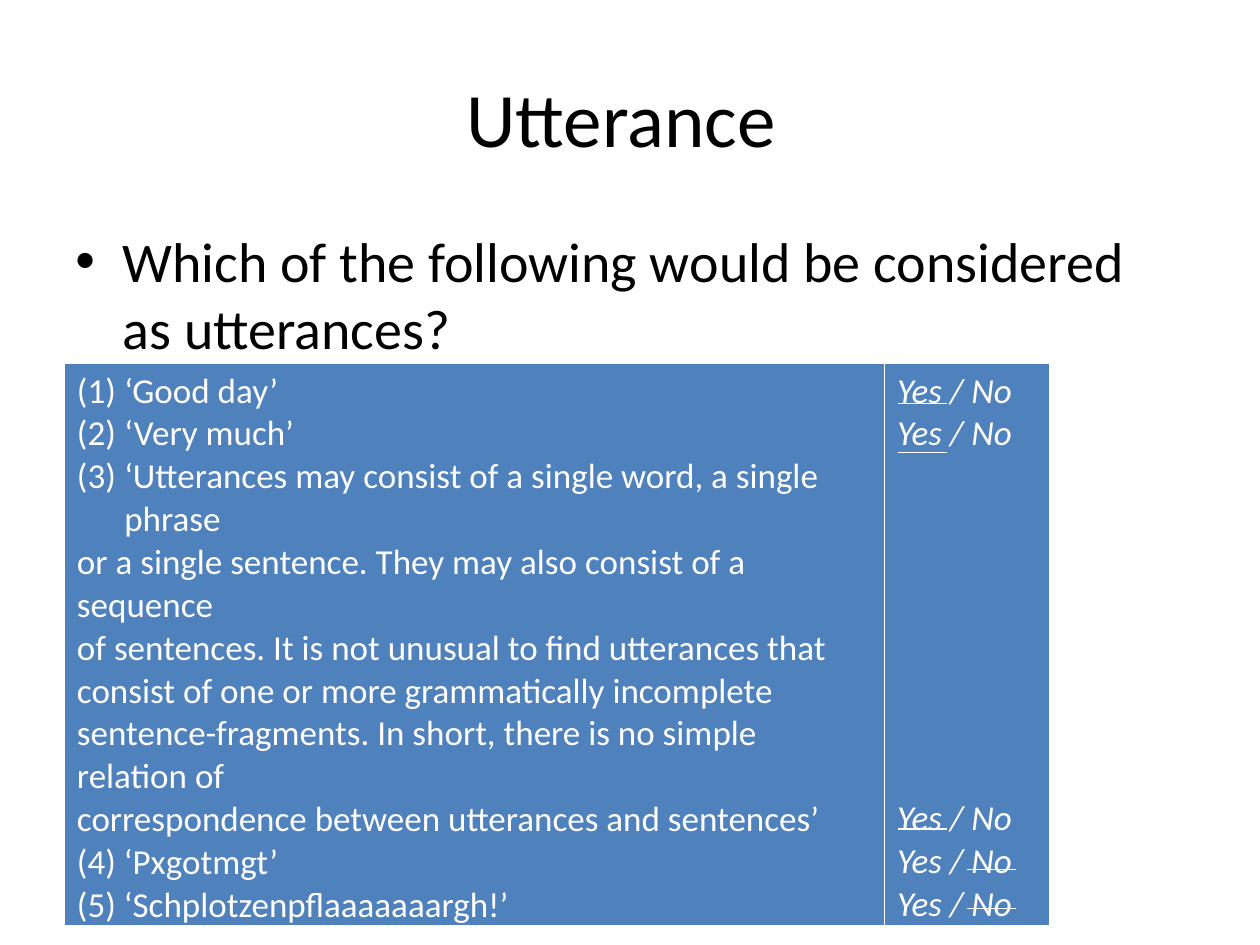
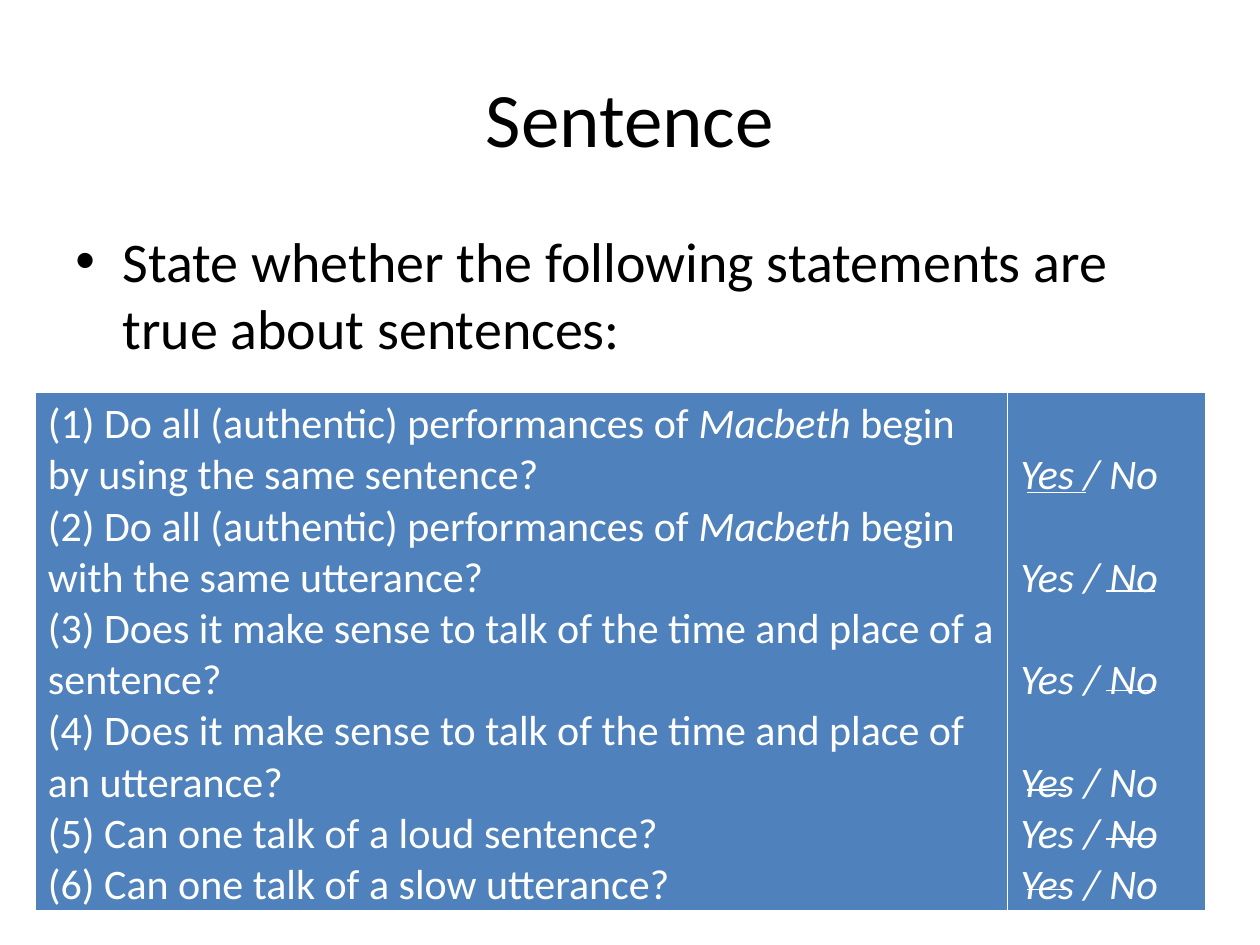
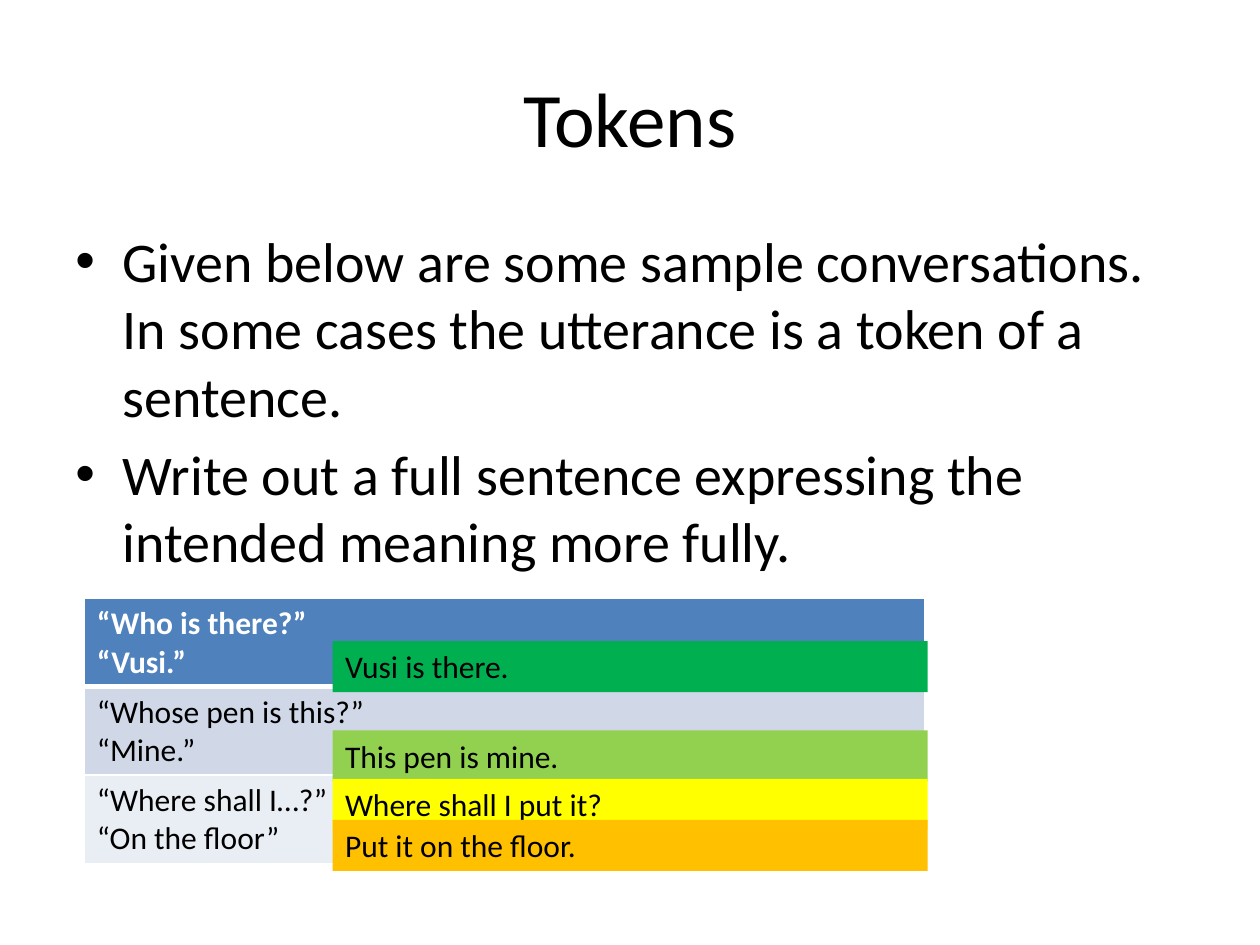
"""Build three exercise slides on utterances, sentences and tokens."""
from dataclasses import dataclass

from pptx import Presentation
from pptx.dml.color import RGBColor
from pptx.enum import shapes, text
from pptx.oxml.ns import qn
from pptx.util import Pt
from lxml import etree

FONT = "Calibri"
BLACK = RGBColor(0x00, 0x00, 0x00)
WHITE = RGBColor(0xFF, 0xFF, 0xFF)
BLUE = RGBColor(0x4F, 0x81, 0xBD)
PALE_BLUE = RGBColor(0xD0, 0xD8, 0xE8)
PALER_BLUE = RGBColor(0xE9, 0xED, 0xF4)
GREEN = RGBColor(0x00, 0xB0, 0x50)
LIME = RGBColor(0x92, 0xD0, 0x50)
YELLOW = RGBColor(0xFF, 0xFF, 0x00)
AMBER = RGBColor(0xFF, 0xC0, 0x00)

CHOICE = "*Yes / No*"
INDENT = 27
LINE_HEIGHT = 1.22
CELL_MARGIN = 3.6


@dataclass(frozen=True)
class Para:
    """A paragraph; text between asterisks is italic."""
    text: str
    before: float = 0
    bullet: str = ""
    numbered: bool = False


@dataclass(frozen=True)
class Cell:
    """A filled table cell."""
    paras: list[Para]
    fill: RGBColor = BLUE
    color: RGBColor = WHITE
    bold: bool = False
    top: float = CELL_MARGIN
    bottom_line: float = 3


@dataclass(frozen=True)
class Mark:
    """A line under a chosen answer."""
    x: float
    y: float
    width: float = 28


@dataclass(frozen=True)
class Answer:
    """A coloured strip holding a full sentence."""
    text: str
    top: float
    fill: RGBColor


def plain(*lines: str) -> list[Para]:
    """Turn lines into unformatted paragraphs."""
    return [Para(line) for line in lines]


def write(tf, paras: list[Para], *, size: float, color: RGBColor = BLACK,
          bold: bool = False, align=text.PP_ALIGN.LEFT) -> None:
    """Write formatted paragraphs into a text frame."""
    tf.word_wrap = True
    for i, para in enumerate(paras):
        p = tf.paragraphs[0] if i == 0 else tf.add_paragraph()
        p.alignment = align
        p.space_before = Pt(para.before)
        if para.bullet or para.numbered:
            pr = p._p.get_or_add_pPr()
            pr.set("marL", str(Pt(INDENT)))
            pr.set("indent", str(Pt(-INDENT)))
            if para.numbered:
                etree.SubElement(pr, qn("a:buAutoNum"), type="arabicParenBoth")
            else:
                etree.SubElement(pr, qn("a:buFont"), typeface="Arial")
                etree.SubElement(pr, qn("a:buChar"), char=para.bullet)
        for j, piece in enumerate(para.text.split("*")):
            if piece:
                r = p.add_run()
                r.text = piece
                r.font.name, r.font.size = FONT, Pt(size)
                r.font.bold, r.font.italic = bold, j % 2 == 1
                r.font.color.rgb = color


def add_text(s, top: float, height: float, paras: list[Para], *, size: float,
             align=text.PP_ALIGN.LEFT, anchor=text.MSO_ANCHOR.TOP) -> None:
    """Add a text box spanning the content width."""
    tf = s.shapes.add_textbox(Pt(36), Pt(top), Pt(648), Pt(height)).text_frame
    tf.vertical_anchor = anchor
    write(tf, paras, size=size, align=align)


def add_page(prs, title: str, bullets: list[str]):
    """Add a slide with its title and bulleted prompt."""
    s = prs.slides.add_slide(prs.slide_layouts[6])
    add_text(s, 21.6, 90, plain(title), size=44, align=text.PP_ALIGN.CENTER,
             anchor=text.MSO_ANCHOR.MIDDLE)
    add_text(s, 126, 356.4, [Para(b, before=6.4, bullet="•") for b in bullets], size=32)
    return s


def set_borders(cell, bottom: float) -> None:
    """Draw white borders round a cell."""
    pr = cell._tc.get_or_add_tcPr()
    widths = {"a:lnL": 1, "a:lnR": 1, "a:lnT": 1, "a:lnB": bottom}
    for i, (tag, width) in enumerate(widths.items()):
        ln = etree.Element(qn(tag), w=str(Pt(width)))
        fill = etree.SubElement(ln, qn("a:solidFill"))
        etree.SubElement(fill, qn("a:srgbClr"), val=str(WHITE))
        pr.insert(i, ln)


def add_grid(s, left: float, top: float, widths: list[float], row_height: float,
             rows: list[list[Cell]], *, size: float) -> None:
    """Add a table of filled cells."""
    table = s.shapes.add_table(len(rows), len(widths), Pt(left), Pt(top),
                               Pt(sum(widths)), Pt(row_height * len(rows))).table
    table.horz_banding = False
    for column, width in zip(table.columns, widths):
        column.width = Pt(width)
    for i, row in enumerate(rows):
        for j, item in enumerate(row):
            cell = table.cell(i, j)
            cell.fill.solid()
            cell.fill.fore_color.rgb = item.fill
            cell.margin_top = Pt(item.top)
            set_borders(cell, item.bottom_line)
            write(cell.text_frame, item.paras, size=size, color=item.color, bold=item.bold)


def add_marks(s, marks: list[Mark]) -> None:
    """Draw the lines that mark the right answers."""
    for mark in marks:
        line = s.shapes.add_connector(shapes.MSO_CONNECTOR.STRAIGHT, Pt(mark.x), Pt(mark.y),
                                      Pt(mark.x + mark.width), Pt(mark.y))
        line.line.color.rgb = WHITE
        line.line.width = Pt(0.75)
        etree.SubElement(line._element.spPr, qn("a:effectLst"))


def add_answer(s, answer: Answer) -> None:
    """Add a strip with a full sentence."""
    sp = s.shapes.add_shape(shapes.MSO_SHAPE.RECTANGLE, Pt(190.1), Pt(answer.top),
                            Pt(340), Pt(29.1))
    sp.shadow.inherit = False
    sp.fill.solid()
    sp.fill.fore_color.rgb = answer.fill
    sp.line.fill.background()
    sp.text_frame.vertical_anchor = text.MSO_ANCHOR.TOP
    write(sp.text_frame, plain(answer.text), size=18)


def build_utterance(prs) -> None:
    """Build the slide on utterances."""
    s = add_page(prs, "Utterance ", ["Which of the following would be considered as utterances?"])
    numbered = ["‘Good day’", "‘Very much’",
                "‘Utterances may consist of a single word, a single phrase"]
    examples = [Para(line, numbered=True) for line in numbered] + plain(
        "or a single sentence. They may also consist of a sequence",
        "of sentences. It is not unusual to find utterances that",
        "consist of one or more grammatically incomplete",
        "sentence-fragments. In short, there is no simple relation of",
        "correspondence between utterances and sentences’",
        "(4) ‘Pxgotmgt’",
        "(5) ‘Schplotzenpflaaaaaaargh!’")
    size = 20
    skipped_lines = [0, 0, 8, 0, 0]
    choices = [Para(CHOICE, before=n * size * LINE_HEIGHT) for n in skipped_lines]
    add_grid(s, 36.8, 207.6, [468.6, 94.4], 319, [[Cell(examples), Cell(choices)]], size=size)
    yes, no = 513.2, 552.8
    add_marks(s, [Mark(yes, 230.4), Mark(yes, 258.5), Mark(yes, 473.8),
                  Mark(no, 496.8), Mark(no, 519.1)])


def build_sentence(prs) -> None:
    """Build the slide on sentences."""
    s = add_page(prs, "Sentence",
                 ["State whether the following statements are true about sentences:"])
    questions = plain(
        "(1) Do all (authentic) performances of *Macbeth *begin by using the same sentence?",
        "(2) Do all (authentic) performances of *Macbeth *begin with the same utterance?",
        "(3) Does it make sense to talk of the time and place of a sentence?",
        "(4) Does it make sense to talk of the time and place of an utterance?",
        "(5) Can one talk of a loud sentence?",
        "(6) Can one talk of a slow utterance?")
    size = 24
    line = size * LINE_HEIGHT
    choices = [Para(CHOICE, before=n * line) for n in [0, 1, 1, 1, 0, 0]]
    add_grid(s, 20.2, 224.2, [555.6, 113], 295.2,
             [[Cell(questions), Cell(choices, top=CELL_MARGIN + line)]], size=size)
    yes, no = 586.8, 632.2
    add_marks(s, [Mark(yes, 281.5, 34), Mark(no, 337.7), Mark(no, 394.6),
                  Mark(yes, 451.4, 22.3), Mark(no, 479.5), Mark(yes, 508.3, 22.3)])


def build_tokens(prs) -> None:
    """Build the slide on tokens."""
    s = add_page(prs, "Tokens", [
        "Given below are some sample conversations. In some cases the utterance is a token "
        "of a sentence.",
        "Write out a full sentence expressing the intended meaning more fully."])
    conversations = [
        Cell(plain("“Who is there?”", "“Vusi.”"), bold=True),
        Cell(plain("“Whose pen is this?”", "“Mine.”"), PALE_BLUE, BLACK, bottom_line=1),
        Cell(plain("“Where shall I…?”", "“On the floor”"), PALER_BLUE, BLACK, bottom_line=1)]
    add_grid(s, 48.2, 342, [480], 50.4, [[cell] for cell in conversations], size=18)
    for answer in [Answer("Vusi is there.", 366.4, GREEN),
                   Answer("This pen is mine.", 417.4, LIME),
                   Answer("Where shall I put it?", 445, YELLOW),
                   Answer("Put it on the floor.", 468.5, AMBER)]:
        add_answer(s, answer)


def main() -> None:
    """Build and save the presentation."""
    prs = Presentation()
    prs.slide_width, prs.slide_height = Pt(720), Pt(540)
    build_utterance(prs)
    build_sentence(prs)
    build_tokens(prs)
    prs.save("out.pptx")


if __name__ == "__main__":
    main()
